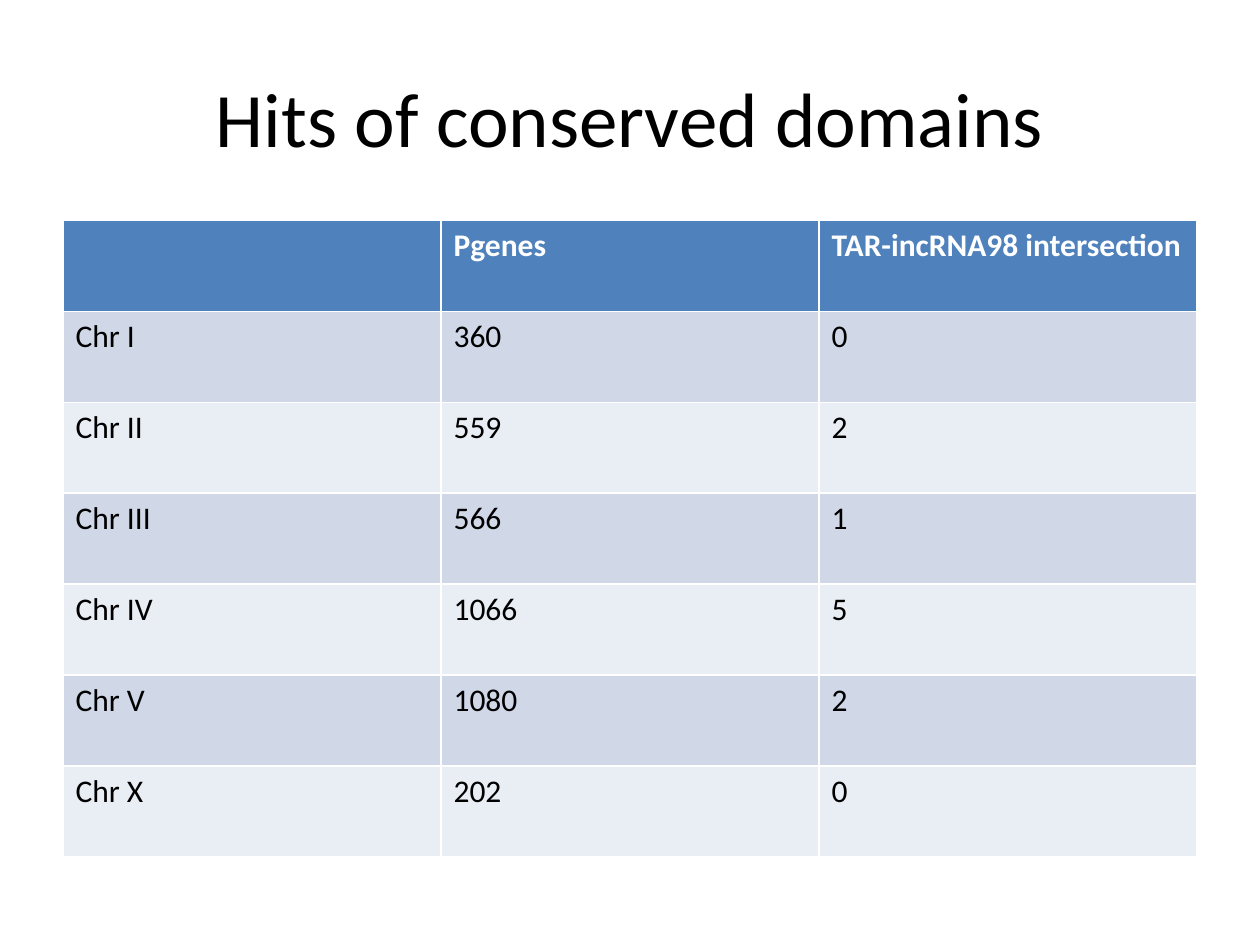
from pptx import Presentation
from pptx.dml.color import RGBColor
from pptx.enum.text import MSO_ANCHOR, PP_ALIGN
from pptx.util import Inches, Pt

TITLE = "Hits of conserved domains"
ROWS = [
    ("", "Pgenes", "TAR-incRNA98 intersection"),
    ("Chr I", "360", "0"),
    ("Chr II", "559", "2"),
    ("Chr III", "566", "1"),
    ("Chr IV", "1066", "5"),
    ("Chr V", "1080", "2"),
    ("Chr X", "202", "0"),
]
HEADER_FILL = "4F81BD"
BAND_FILLS = ("D0D8E8", "E9EDF4")
TITLE_FORMAT = {"name": "Calibri", "size": Pt(44), "bold": False}
HEADER_FORMAT = {"name": "Calibri", "size": Pt(18), "bold": True}
BODY_FORMAT = {**HEADER_FORMAT, "bold": False}


def paint(color_format, hex_color):
    color_format.rgb = RGBColor.from_string(hex_color)


def write(paragraph, text, font_format, hex_color):
    paragraph.text = text
    for name, value in font_format.items():
        setattr(paragraph.font, name, value)
    paint(paragraph.font.color, hex_color)


def add_title(slide):
    box = slide.shapes.add_textbox(Inches(0.5), Inches(0.3), Inches(9), Inches(1.25))
    frame = box.text_frame
    frame.word_wrap = True
    frame.vertical_anchor = MSO_ANCHOR.MIDDLE
    paragraph = frame.paragraphs[0]
    paragraph.alignment = PP_ALIGN.CENTER
    write(paragraph, TITLE, TITLE_FORMAT, "000000")


def add_hits_table(slide):
    """The default table style supplies the white rules between cells."""
    table = slide.shapes.add_table(
        len(ROWS), len(ROWS[0]), Inches(0.5), Inches(1.75), Inches(9), Inches(5.05)
    ).table
    for row_index, values in enumerate(ROWS):
        is_header = row_index == 0
        fill = HEADER_FILL if is_header else BAND_FILLS[(row_index - 1) % 2]
        font_format = HEADER_FORMAT if is_header else BODY_FORMAT
        text_color = "FFFFFF" if is_header else "000000"
        for column_index, value in enumerate(values):
            cell = table.cell(row_index, column_index)
            cell.fill.solid()
            paint(cell.fill.fore_color, fill)
            write(cell.text_frame.paragraphs[0], value, font_format, text_color)


def main():
    presentation = Presentation()
    presentation.slide_width = Inches(10)
    presentation.slide_height = Inches(7.5)
    slide = presentation.slides.add_slide(presentation.slide_layouts[6])
    add_title(slide)
    add_hits_table(slide)
    presentation.save("out.pptx")


if __name__ == "__main__":
    main()
